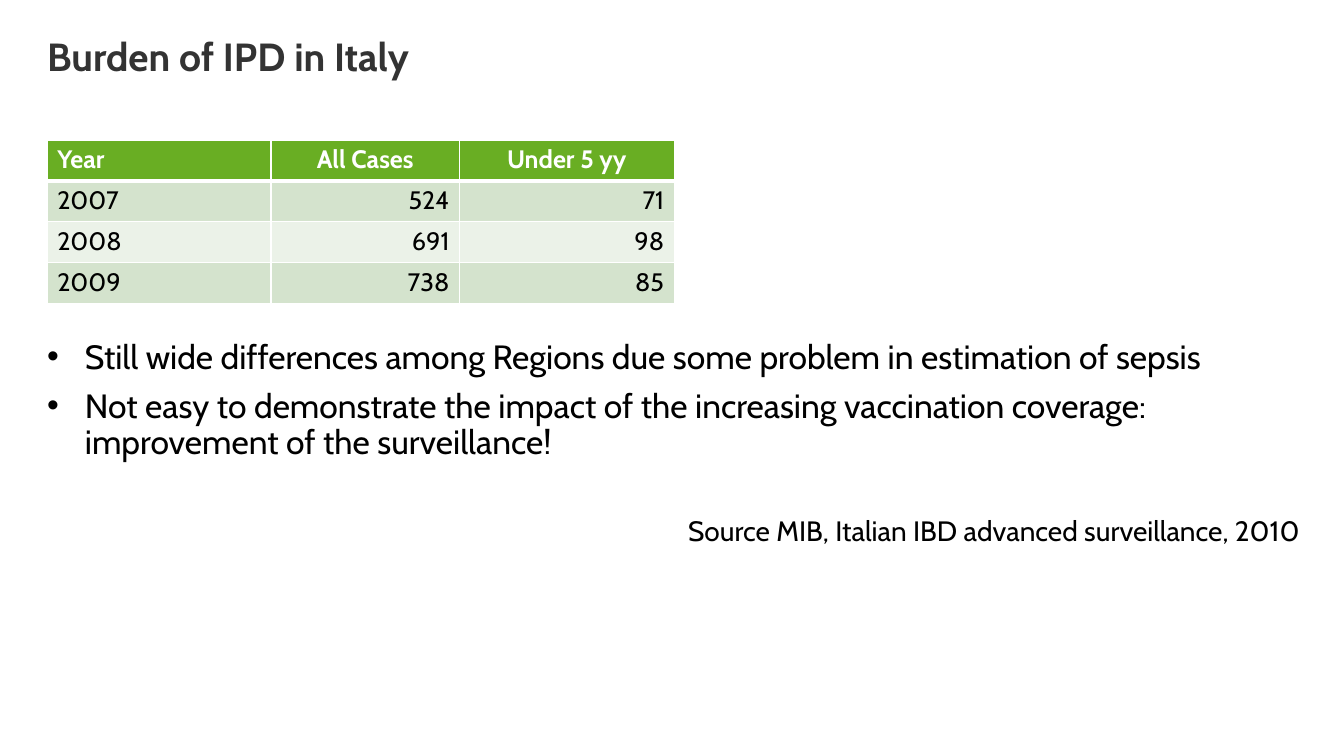
import dataclasses
import pptx
import pptx.util
import pptx.dml.color
import pptx.enum.text
import pptx.oxml.ns
from lxml import etree

Cm = pptx.util.Cm
Pt = pptx.util.Pt
Align = pptx.enum.text.PP_ALIGN
Anchor = pptx.enum.text.MSO_ANCHOR


@dataclasses.dataclass(frozen=True)
class Theme:
    font: str = "Cabin"
    ink: str = "000000"
    title: str = "333333"
    white: str = "FFFFFF"
    green: str = "69AE23"
    bands: tuple = ("D4E3CD", "EBF2E8")
    head: int = 28
    list: int = 24
    note: int = 20
    cell: int = 18


THEME = Theme()
LEFT = Cm(1.19)
CASES = [
    ("Year", "All Cases", "Under 5 yy"),
    ("2007", "524", "71"),
    ("2008", "691", "98"),
    ("2009", "738", "85"),
]
POINTS = [
    "Still wide differences among Regions due some problem in estimation of sepsis",
    "Not easy to demonstrate the impact of the increasing vaccination coverage: "
    "improvement of the surveillance!",
]
SOURCE = "Source MIB, Italian IBD advanced surveillance, 2010"


def rgb(code):
    return pptx.dml.color.RGBColor.from_string(code)


def add_node(parent, tag, **attrs):
    node = etree.SubElement(parent, pptx.oxml.ns.qn(tag))
    for key, value in attrs.items():
        node.set(key, str(value))
    return node


def write(frame, text, size, color=THEME.ink, bold=False, align=Align.LEFT,
          before=0, after=0, bullet=None):
    first = frame.paragraphs[0]
    para = frame.add_paragraph() if first.runs else first
    indent = Cm(0.95) if bullet else 0
    props = para._p.get_or_add_pPr()
    props.set("marL", str(int(indent)))
    props.set("indent", str(-int(indent)))
    if bullet:
        add_node(props, "a:buFont", typeface="Arial")
        add_node(props, "a:buChar", char=bullet)
    else:
        add_node(props, "a:buNone")
    para.alignment = align
    para.line_spacing = 0.9
    para.space_before = Pt(before)
    para.space_after = Pt(after)
    run = para.add_run()
    run.text = text
    run.font.name = THEME.font
    run.font.size = Pt(size)
    run.font.bold = bold
    run.font.color.rgb = rgb(color)


def place(holder, left, top, width, height):
    holder.left, holder.top = left, top
    holder.width, holder.height = width, height
    frame = holder.text_frame
    frame.margin_left = frame.margin_right = 0
    frame.margin_top = frame.margin_bottom = 0
    frame.vertical_anchor = Anchor.TOP
    frame.auto_size = pptx.enum.text.MSO_AUTO_SIZE.NONE
    frame.word_wrap = True
    return frame


def paint(cell, fill, top, base):
    props = cell._tc.get_or_add_tcPr()
    for side, width in (("L", 1), ("R", 1), ("T", top), ("B", base)):
        line = add_node(props, "a:ln" + side, w=int(Pt(width)))
        add_node(add_node(line, "a:solidFill"), "a:srgbClr", val=THEME.white)
    cell.fill.solid()
    cell.fill.fore_color.rgb = rgb(fill)
    cell.vertical_anchor = Anchor.MIDDLE


def add_grid(slide, rows, widths, top, height):
    table = slide.shapes.add_table(
        len(rows), len(widths), LEFT, top, sum(widths), height * len(rows)).table
    for col, width in zip(table.columns, widths):
        col.width = width
    for r, row in enumerate(rows):
        table.rows[r].height = height
        head = r == 0
        fill = THEME.green if head else THEME.bands[(r - 1) % 2]
        for c, text in enumerate(row):
            cell = table.cell(r, c)
            paint(cell, fill, 3 if r == 1 else 1, 3 if head else 1)
            side = Align.CENTER if head else Align.RIGHT
            write(cell.text_frame, text, THEME.cell, bold=head,
                  color=THEME.white if head else THEME.ink,
                  align=side if c else Align.LEFT)


def add_list(frame, points, source):
    for n, point in enumerate(points):
        write(frame, point, THEME.list, bullet="•", before=3 if n else 0, after=6)
    write(frame, source, THEME.note, align=Align.RIGHT, before=34, after=6)


def main():
    deck = pptx.Presentation()
    deck.slide_width, deck.slide_height = Cm(33.87), Cm(19.05)
    slide = deck.slides.add_slide(deck.slide_layouts[1])
    title = place(slide.shapes.title, LEFT, Cm(0.94), Cm(28.65), Cm(2.21))
    write(title, "Burden of IPD in Italy", THEME.head, color=THEME.title, bold=True)
    body = place(slide.placeholders[1], LEFT, Cm(8.57), Cm(31.57), Cm(8.78))
    add_list(body, POINTS, SOURCE)
    add_grid(slide, CASES, (Cm(5.64), Cm(4.75), Cm(5.41)), Cm(3.53), Cm(1.03))
    deck.save("out.pptx")


if __name__ == "__main__":
    main()
